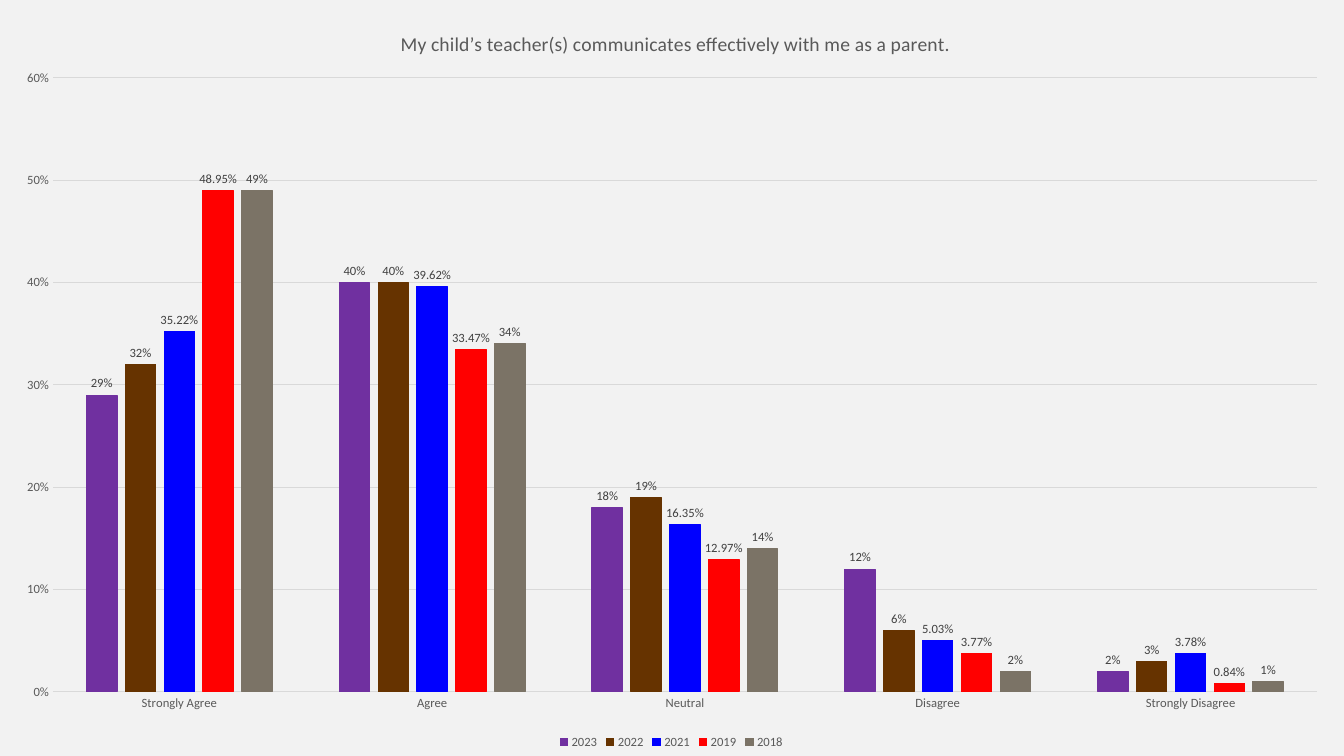
from dataclasses import dataclass

import pptx
import pptx.chart.data
import pptx.dml.color
import pptx.enum.chart
import pptx.oxml
import pptx.oxml.ns
import pptx.util

SLIDE_W, SLIDE_H = 1344, 756  # px
EMU_PER_PX = 914400 * 10 // 1008


@dataclass(frozen=True)
class Theme:
    font: str = "Calibri"
    background: str = "F2F2F2"
    text: str = "595959"
    label: str = "404040"
    rule: str = "D9D9D9"
    title_size: int = 14
    small_size: int = 9
    line_width: float = 0.75


@dataclass(frozen=True)
class SurveyYear:
    name: str
    color: str
    shares: tuple[float, ...]
    number_format: str = "0%"


@dataclass(frozen=True)
class Box:
    left: int
    top: int
    width: int
    height: int


THEME = Theme()
QUESTION = "My child’s teacher(s) communicates effectively with me as a parent."
ANSWERS = ("Strongly Agree", "Agree", "Neutral", "Disagree", "Strongly Disagree")
YEARS = (
    SurveyYear("2023", "7030A0", (0.29, 0.4, 0.18, 0.12, 0.02)),
    SurveyYear("2022", "663300", (0.32, 0.4, 0.19, 0.06, 0.03)),
    SurveyYear("2021", "0000FF", (0.3522, 0.3962, 0.1635, 0.0503, 0.0378), "0.00%"),
    SurveyYear("2019", "FF0000", (0.4895, 0.3347, 0.1297, 0.0377, 0.0084), "0.00%"),
    SurveyYear("2018", "7B7366", (0.49, 0.34, 0.14, 0.02, 0.01)),
)
PLOT_BOX = Box(53, 78, 1264, 614)
TITLE_BOX = Box(397, 27, 548, 24)
LEGEND_BOX = Box(555, 734, 233, 20)


def px(length: int) -> pptx.util.Emu:
    return pptx.util.Emu(length * EMU_PER_PX)


def rgb(color: str) -> pptx.dml.color.RGBColor:
    return pptx.dml.color.RGBColor.from_string(color)


def style_font(font, *, size: int = THEME.small_size, color: str = THEME.text) -> None:
    font.name = THEME.font
    font.size = pptx.util.Pt(size)
    font.bold = False
    font.color.rgb = rgb(color)


def write_text(frame, text: str, **font_format) -> None:
    frame.text = text
    style_font(frame.paragraphs[0].runs[0].font, **font_format)


def style_line(line, color: str) -> None:
    line.color.rgb = rgb(color)
    line.width = pptx.util.Pt(THEME.line_width)


def place(part, box: Box, index: int, sized: bool = True, inner: bool = False) -> None:
    """Fix a chart part's place, as fractions of the slide."""
    for old in part.xpath("./c:layout"):
        part.remove(old)
    settings = [("layoutTarget", "inner")] if inner else []
    settings += [("xMode", "edge"), ("yMode", "edge"),
                 ("x", box.left / SLIDE_W), ("y", box.top / SLIDE_H)]
    if sized:
        settings += [("w", box.width / SLIDE_W), ("h", box.height / SLIDE_H)]
    body = "".join(f'<c:{tag} val="{value}"/>' for tag, value in settings)
    part.insert(index, pptx.oxml.parse_xml(
        f'<c:layout {pptx.oxml.ns.nsdecls("c")}>'
        f"<c:manualLayout>{body}</c:manualLayout></c:layout>"))


def add_survey_chart(slide):
    survey = pptx.chart.data.CategoryChartData()
    survey.categories = ANSWERS
    for year in YEARS:
        survey.add_series(year.name, year.shares, year.number_format)
    return slide.shapes.add_chart(
        pptx.enum.chart.XL_CHART_TYPE.COLUMN_CLUSTERED,
        0, 0, px(SLIDE_W), px(SLIDE_H), survey).chart


def style_columns(chart) -> None:
    columns = chart.plots[0]
    columns.gap_width = 219
    columns.overlap = -27
    columns.vary_by_categories = False
    for series, year in zip(columns.series, YEARS):
        series.format.fill.solid()
        series.format.fill.fore_color.rgb = rgb(year.color)
        style_line(series.format.line, year.color)
        labels = series.data_labels
        labels.show_value = True
        labels.position = pptx.enum.chart.XL_LABEL_POSITION.OUTSIDE_END
        labels.number_format = year.number_format
        labels.number_format_is_linked = False
        style_font(labels.font, color=THEME.label)


def style_axes(chart) -> None:
    answers, shares = chart.category_axis, chart.value_axis
    for axis in (answers, shares):
        axis.major_tick_mark = pptx.enum.chart.XL_TICK_MARK.NONE
        axis.minor_tick_mark = pptx.enum.chart.XL_TICK_MARK.NONE
        style_font(axis.tick_labels.font)
    style_line(answers.format.line, THEME.rule)
    shares.format.line.fill.background()
    shares.minimum_scale, shares.maximum_scale, shares.major_unit = 0, 0.6, 0.1
    shares.tick_labels.number_format = "0%"
    shares.tick_labels.number_format_is_linked = False
    style_line(shares.major_gridlines.format.line, THEME.rule)


def main() -> None:
    deck = pptx.Presentation()
    deck.slide_width, deck.slide_height = px(SLIDE_W), px(SLIDE_H)
    slide = deck.slides.add_slide(deck.slide_layouts[6])
    slide.background.fill.solid()
    slide.background.fill.fore_color.rgb = rgb(THEME.background)

    # Survey columns and axes
    chart = add_survey_chart(slide)
    style_font(chart.font)
    style_columns(chart)
    style_axes(chart)

    # Question and legend
    chart.has_title = True
    write_text(chart.chart_title.text_frame, QUESTION, size=THEME.title_size)
    chart.has_legend = True
    chart.legend.position = pptx.enum.chart.XL_LEGEND_POSITION.BOTTOM
    chart.legend.include_in_layout = False
    style_font(chart.legend.font)

    # Places of the chart's parts
    chart_root = chart.element
    place(chart_root.xpath("c:chart/c:plotArea")[0], PLOT_BOX, 0, inner=True)
    place(chart_root.xpath("c:chart/c:title")[0], TITLE_BOX, 1, sized=False)
    place(chart_root.xpath("c:chart/c:legend")[0], LEGEND_BOX, 1)

    deck.save("out.pptx")


if __name__ == "__main__":
    main()
